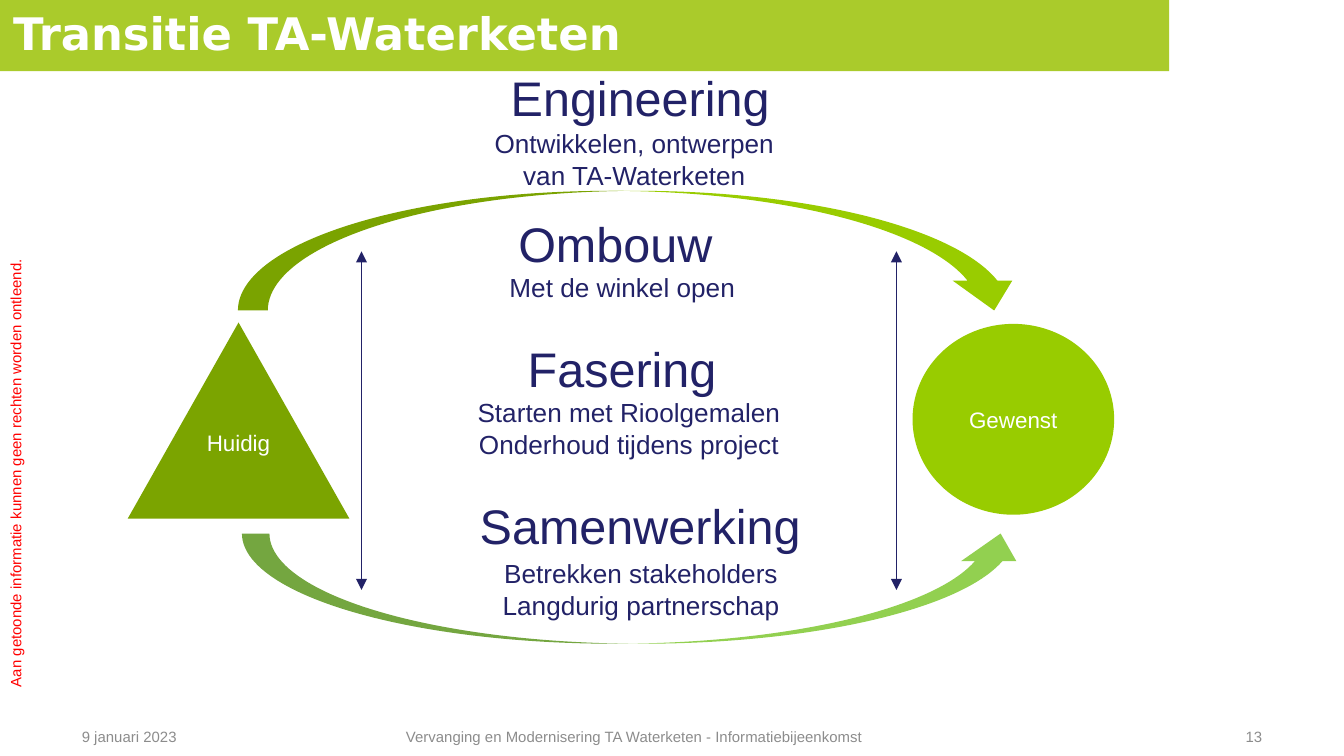
from lxml import etree
from pptx import Presentation
from pptx.dml.color import RGBColor
from pptx.enum.shapes import MSO_CONNECTOR, MSO_SHAPE
from pptx.enum.text import MSO_ANCHOR, PP_ALIGN
from pptx.oxml.ns import qn
from pptx.util import Inches, Pt

LEFT, CENTER, RIGHT = PP_ALIGN.LEFT, PP_ALIGN.CENTER, PP_ALIGN.RIGHT
TOP, MIDDLE = MSO_ANCHOR.TOP, MSO_ANCHOR.MIDDLE
RECTANGLE, OVAL = MSO_SHAPE.RECTANGLE, MSO_SHAPE.OVAL
TRIANGLE, CURVED_ARROW = MSO_SHAPE.ISOSCELES_TRIANGLE, MSO_SHAPE.CURVED_DOWN_ARROW
STRAIGHT = MSO_CONNECTOR.STRAIGHT

WHITE = RGBColor(0xFF, 0xFF, 0xFF)
RED = RGBColor(0xFF, 0x00, 0x00)
GRAY = RGBColor(0x8C, 0x8C, 0x8C)
NAVY = RGBColor(0x22, 0x22, 0x67)
BANNER_GREEN = RGBColor(0xAA, 0xCB, 0x2B)
CURRENT_GREEN = RGBColor(0x7B, 0xA4, 0x00)
DESIRED_GREEN = RGBColor(0x98, 0xCC, 0x00)
UPPER_GREEN = RGBColor(0x99, 0xCC, 0x00)
LOWER_GREEN = RGBColor(0x92, 0xD0, 0x50)

BODY_FONT, TITLE_FONT = "Arial", "DejaVu Sans"
HEADING, DETAIL, LABEL, SMALL = 26, 14, 12, 8


def write_lines(shape, lines, color, align=CENTER, anchor=TOP, font=BODY_FONT,
                bold=False, wrap=True):
    """Fill a shape with (text, size) lines, one paragraph each."""
    text_frame = shape.text_frame
    text_frame.word_wrap = wrap
    text_frame.vertical_anchor = anchor
    text_frame.text = "\n".join(text for text, _ in lines)
    for paragraph, (_, size) in zip(text_frame.paragraphs, lines):
        paragraph.alignment = align
        for run in paragraph.runs:
            run.font.name = font
            run.font.size = Pt(size)
            run.font.bold = bold
            run.font.color.rgb = color


def add_text(slide, box, lines, color, **options):
    shape = slide.shapes.add_textbox(*map(Inches, box))
    write_lines(shape, lines, color, **options)
    return shape


def add_filled_shape(slide, kind, box, fill):
    shape = slide.shapes.add_shape(kind, *map(Inches, box))
    shape.shadow.inherit = False
    shape.fill.solid()
    shape.fill.fore_color.rgb = fill
    shape.line.fill.background()
    return shape


def add_double_arrow(slide, x, top, bottom):
    arrow = slide.shapes.add_connector(
        STRAIGHT, Inches(x), Inches(top), Inches(x), Inches(bottom))
    arrow.line.color.rgb = NAVY
    arrow.line.width = Pt(0.75)
    line = arrow.line._get_or_add_ln()
    for end in ("a:headEnd", "a:tailEnd"):
        etree.SubElement(line, qn(end), type="triangle")
    etree.SubElement(arrow._element.spPr, qn("a:effectLst"))


def add_banner(slide, box):
    banner = add_filled_shape(slide, RECTANGLE, box, BANNER_GREEN)
    write_lines(banner, [("Transitie TA-Waterketen", 24)], WHITE, align=LEFT,
                anchor=MIDDLE, font=TITLE_FONT, bold=True)
    banner.text_frame.margin_bottom = Inches(0.08)


def add_disclaimer(slide, box):
    text = "Aan getoonde informatie kunnen geen rechten worden ontleend."
    disclaimer = add_text(slide, box, [(text, SMALL)], RED, wrap=False)
    disclaimer.rotation = 270


def add_footer(slide, box):
    left, top, _, height = box
    parts = [
        (0, 1.65, "9 januari 2023", LEFT),
        (1.73, 4.96, "Vervanging en Modernisering TA Waterketen - Informatiebijeenkomst", CENTER),
        (8.45, 0.53, "13", RIGHT),
    ]
    for offset, width, text, align in parts:
        add_text(slide, (left + offset, top, width, height), [(text, SMALL)],
                 GRAY, align=align, anchor=MIDDLE)


def add_transition(slide, box):
    """Current and desired state, joined by two curved arrows."""
    left, top, width, height = box

    # States
    current = add_filled_shape(slide, TRIANGLE, (left, top + 0.98, 1.65, 1.46), CURRENT_GREEN)
    write_lines(current, [("Huidig", LABEL)], WHITE)
    current.text_frame.margin_top = Inches(0.06)
    desired = add_filled_shape(
        slide, OVAL, (left + width - 1.5, top + 0.99, 1.5, 1.42), DESIRED_GREEN)
    write_lines(desired, [("Gewenst", LABEL)], WHITE, anchor=MIDDLE)

    # Curved arrows; the lower one is mirrored
    add_filled_shape(slide, CURVED_ARROW, (left + 0.82, top, 5.85, 0.89), UPPER_GREEN)
    lower = add_filled_shape(
        slide, CURVED_ARROW, (left + 0.85, top + height - 0.82, 5.85, 0.82), LOWER_GREEN)
    lower._element.spPr.xfrm.set("flipV", "1")

    # Vertical arrows beside the themes
    for offset in (1.74, 5.72):
        add_double_arrow(slide, left + offset, top + 0.45, top + 2.97)


def add_themes(slide, box):
    """Column of headings with their details."""
    left, top, width, _ = box
    narrow = 3.22
    themes = [
        (0, 0, width, 0.54, [("Engineering", HEADING)]),
        (0.87, 0.44, narrow, 0.57,
         [("Ontwikkelen, ontwerpen", DETAIL), ("van TA-Waterketen", DETAIL)]),
        (0.78, 1.08, narrow, 0.77,
         [("Ombouw ", HEADING), ("Met de winkel open", DETAIL)]),
        (0.83, 2.01, narrow, 1.01,
         [("Fasering ", HEADING), ("Starten met Rioolgemalen", DETAIL),
          ("Onderhoud tijdens project", DETAIL)]),
        (0, 3.18, width, 0.54, [("Samenwerking", HEADING)]),
        (0.92, 3.64, narrow, 0.57,
         [("Betrekken stakeholders", DETAIL), ("Langdurig partnerschap", DETAIL)]),
    ]
    for x, y, text_width, height, lines in themes:
        add_text(slide, (left + x, top + y, text_width, height), lines, NAVY)


def main():
    presentation = Presentation()
    # Widescreen, 16:9
    presentation.slide_width = Inches(10)
    presentation.slide_height = Inches(10) * 9 // 16
    slide = presentation.slides.add_slide(presentation.slide_layouts[6])

    add_disclaimer(slide, (-1.58, 3.4, 3.4, 0.24))
    add_banner(slide, (0, -0.01, 8.7, 0.54))
    add_footer(slide, (0.51, 5.37, 8.98, 0.22))
    add_transition(slide, (0.95, 1.42, 7.34, 3.37))
    add_themes(slide, (2.24, 0.46, 5.05, 4.21))

    presentation.save("out.pptx")


if __name__ == "__main__":
    main()
